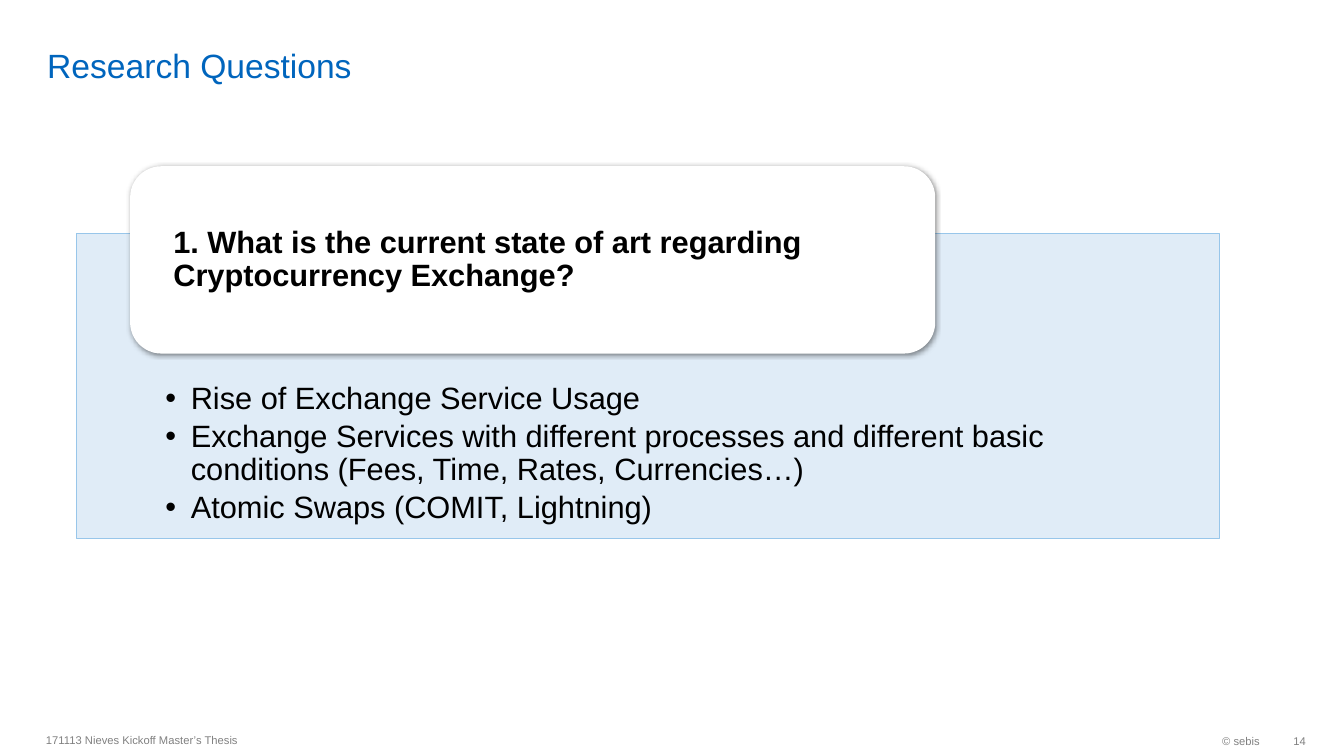
from lxml.etree import SubElement
from pptx import Presentation
from pptx.dml.color import RGBColor
from pptx.enum.shapes import MSO_SHAPE as Preset
from pptx.enum.text import MSO_ANCHOR as Anchor, PP_ALIGN as Align
from pptx.oxml import parse_xml
from pptx.oxml.ns import nsdecls, qn
from pptx.util import Cm, Pt

TITLE = ("Research Questions", (0.94, 0.13, 29.41, 2.01))
FOOTERS = [
    ("© sebis", (26.06, 18.26, 5.94, 0.81), Align.RIGHT, 0.25),
    ("171113 Nieves Kickoff Master’s Thesis", (0.91, 18.24, 16, 0.81), Align.LEFT, 0.25),
    ("14", (32, 18.26, 0.91, 0.81), Align.RIGHT, 0),
]
QUESTION = "1. What is the current state of art regarding Cryptocurrency Exchange?"
FINDINGS = [
    "Rise of Exchange Service Usage",
    "Exchange Services with different processes and different basic conditions "
    "(Fees, Time, Rates, Currencies…)",
    "Atomic Swaps (COMIT, Lightning)",
]
PANEL_BOX = (1.93, 5.89, 28.8, 7.67)
CARD_BOX = (3.28, 4.19, 20.29, 4.72)
BULLET_INDENT = Cm(0.64)
SHADOW = (
    f'<a:effectLst {nsdecls("a")}><a:outerShdw blurRad="{Pt(3.5)}" dist="{Pt(1.1)}" '
    'dir="5400000" rotWithShape="0"><a:srgbClr val="000000"><a:alpha val="45000"/>'
    "</a:srgbClr></a:outerShdw></a:effectLst>"
)


def color(value):
    return RGBColor.from_string(value)


def lengths(values):
    return [Cm(value) for value in values]


def write(shape, lines, size, ink, insets, anchor, align=Align.LEFT, bold=False,
          spacing=None, after=0, bullets=False):
    frame = shape.text_frame
    frame.word_wrap = True
    frame.vertical_anchor = anchor
    (frame.margin_left, frame.margin_top,
     frame.margin_right, frame.margin_bottom) = lengths(insets)
    frame.text = "\n".join(lines)
    for paragraph in frame.paragraphs:
        paragraph.alignment = align
        paragraph.line_spacing = spacing
        paragraph.space_after = Pt(after)
        if bullets:
            properties = paragraph._p.get_or_add_pPr()
            properties.set("marL", str(BULLET_INDENT))
            properties.set("indent", str(-BULLET_INDENT))
            SubElement(properties, qn("a:buFont"), typeface="Arial")
            SubElement(properties, qn("a:buChar"), char="•")
        for run in paragraph.runs:
            run.font.name = "Arial"
            run.font.size = Pt(size)
            run.font.bold = bold
            run.font.color.rgb = color(ink)


def add_panel(slide, preset, box, fill):
    shape = slide.shapes.add_shape(preset, *lengths(box))
    shape.shadow.inherit = False
    shape.fill.solid()
    shape.fill.fore_color.rgb = color(fill)
    return shape


def main():
    """Build the research question slide."""
    presentation = Presentation()
    presentation.slide_width, presentation.slide_height = Cm(33.87), Cm(19.05)
    slide = presentation.slides.add_slide(presentation.slide_layouts[6])

    title, title_box = TITLE
    write(slide.shapes.add_textbox(*lengths(title_box)), [title], 24, "0065BD",
          (0.25, 0, 0.25, 0), Anchor.BOTTOM)
    for text, box, align, right in FOOTERS:
        write(slide.shapes.add_textbox(*lengths(box)), [text], 8, "808080",
              (0.25, 0.13, right, 0.13), Anchor.MIDDLE, align)

    panel = add_panel(slide, Preset.RECTANGLE, PANEL_BOX, "DDEAF7")
    SubElement(panel.fill._xPr.find(".//" + qn("a:srgbClr")), qn("a:alpha"), val="90000")
    panel.line.color.rgb = color("98C6EA")
    panel.line.width = Pt(0.75)
    write(panel, FINDINGS, 22, "000000", (2.24, 3.76, 2.24, 0.43), Anchor.TOP,
          spacing=0.9, after=3.3, bullets=True)

    card = add_panel(slide, Preset.ROUNDED_RECTANGLE, CARD_BOX, "FFFFFF")
    card.line.fill.background()
    properties = card._element.spPr
    properties.replace(properties.find(qn("a:effectLst")), parse_xml(SHADOW))
    write(card, [QUESTION], 22, "000000", (0.86, 0.23, 0.86, 0.23), Anchor.MIDDLE,
          bold=True, spacing=0.9)

    presentation.save("out.pptx")


if __name__ == "__main__":
    main()
